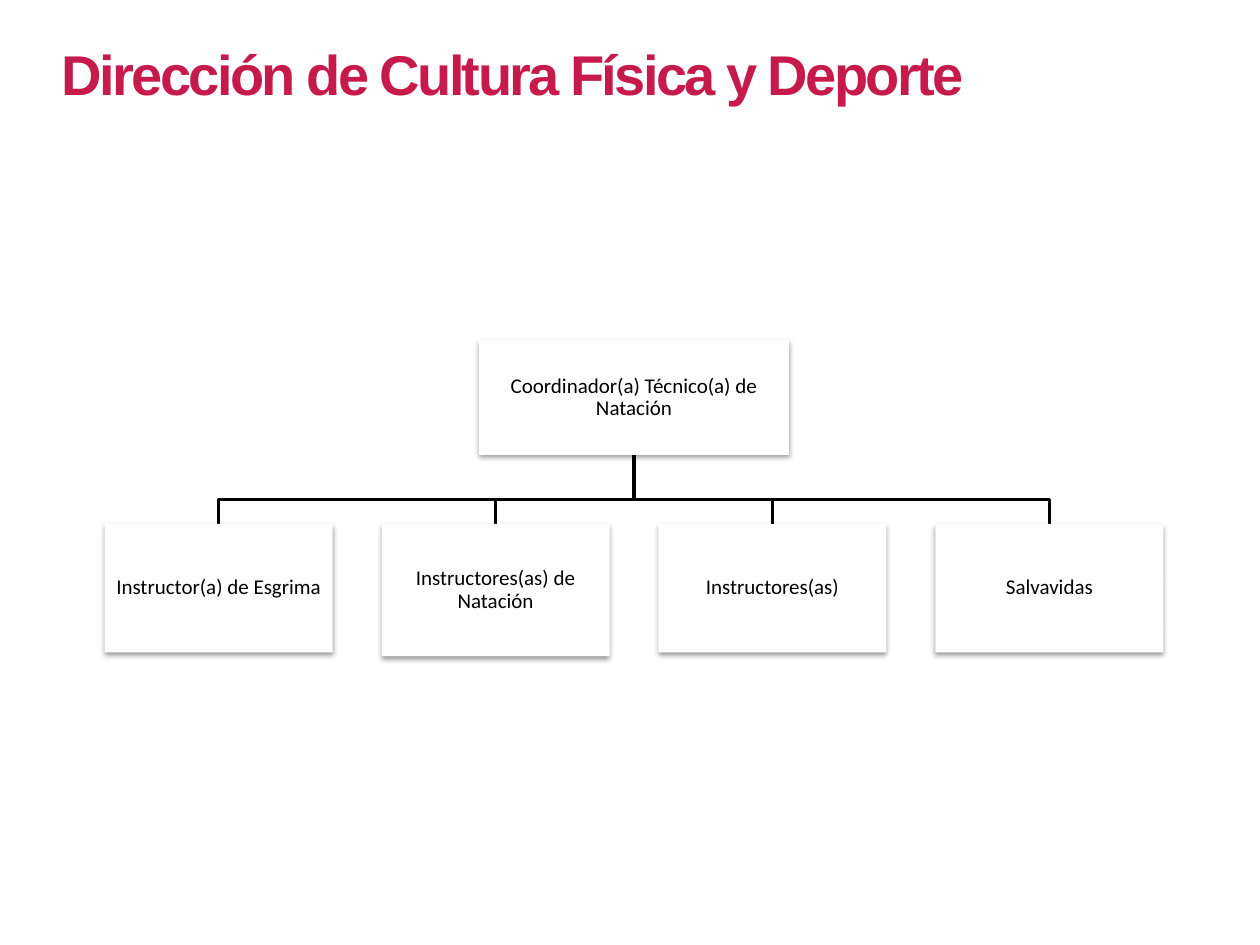
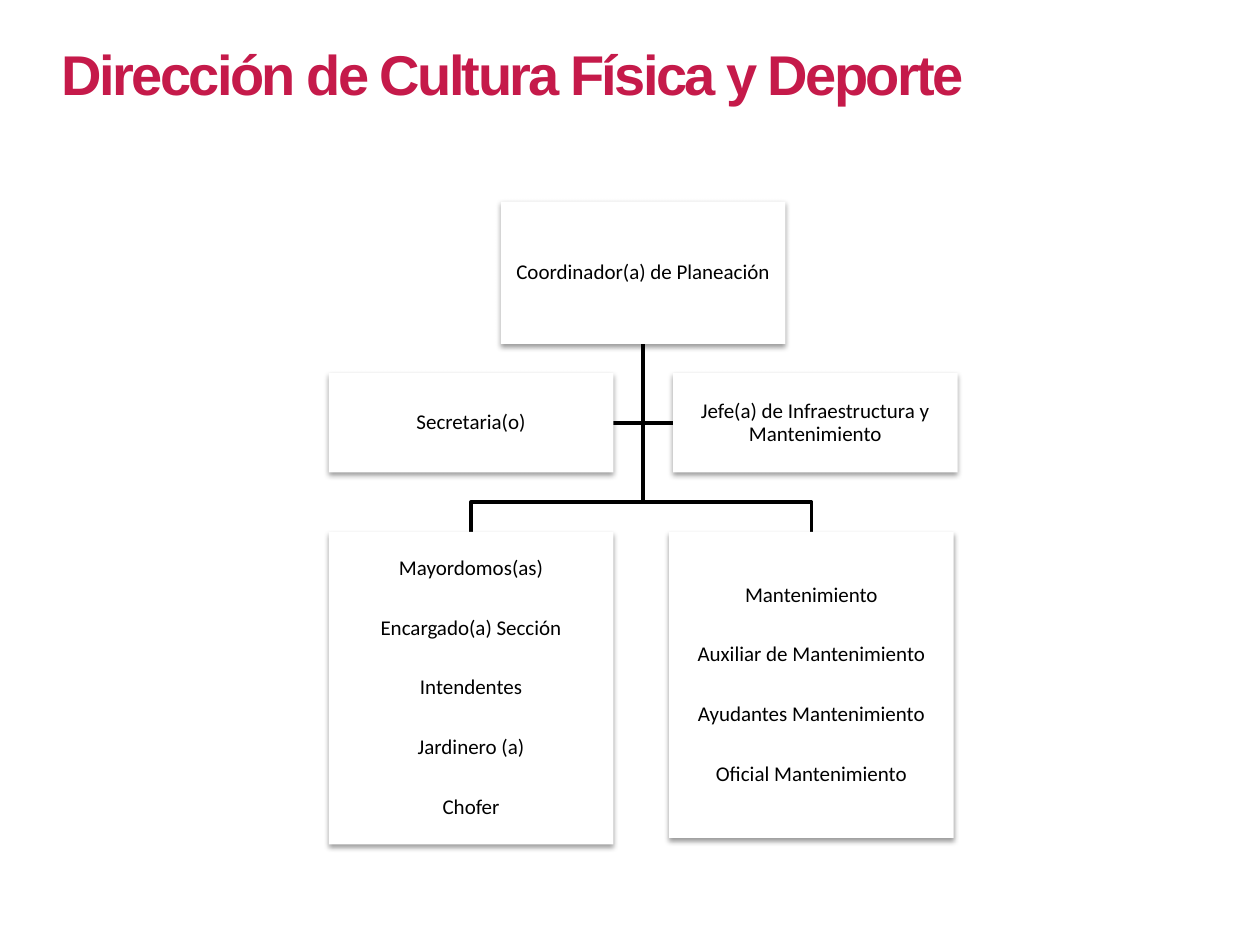
import dataclasses
import lxml.etree
import pptx
import pptx.dml.color
import pptx.enum.shapes
import pptx.enum.text
import pptx.oxml.ns
import pptx.util

Pt = pptx.util.Pt


@dataclasses.dataclass(frozen=True)
class Theme:
    """Colours, fonts and sizes shared by the slides."""
    red: str = "C51A4A"
    black: str = "000000"
    white: str = "FFFFFF"
    head_font: str = "Arial"
    card_font: str = "Calibri"
    head_size: float = 32
    card_size: float = 12
    line: float = 2
    inset: float = 0.9
    gap: float = 21.1


@dataclasses.dataclass(frozen=True)
class Box:
    """A rectangle in points."""
    left: float
    top: float
    width: float
    height: float

    @property
    def mid(self):
        """Return the horizontal middle."""
        return self.left + self.width / 2

    @property
    def base(self):
        """Return the bottom edge."""
        return self.top + self.height

    def inner(self, left, top, width, height):
        """Return a box placed relative to this one."""
        return Box(self.left + left, self.top + top, width, height)

    def place(self):
        """Return the four sides as lengths."""
        return [Pt(side) for side in (self.left, self.top, self.width, self.height)]


THEME = Theme()
HEAD = Box(28.1, 18.7, 553.7, 46)


def color(code):
    """Turn a hex code into a colour."""
    return pptx.dml.color.RGBColor.from_string(code)


def style(para, font, size, code, bold=False):
    """Set the font of a paragraph."""
    para.font.name = font
    para.font.size = Pt(size)
    para.font.bold = bold
    para.font.color.rgb = color(code)


def add_shade(shape):
    """Give a card its soft shadow below."""
    shape.shadow.inherit = False
    tag = pptx.oxml.ns.qn
    effects = shape._element.spPr.find(tag("a:effectLst"))
    shade = lxml.etree.SubElement(effects, tag("a:outerShdw"), blurRad=str(Pt(3.1)),
                                  dist=str(Pt(1.6)), dir="5400000", rotWithShape="0")
    tint = lxml.etree.SubElement(shade, tag("a:srgbClr"), val=THEME.black)
    lxml.etree.SubElement(tint, tag("a:alpha"), val="38000")


def add_card(slide, box, *lines):
    """Draw a white card with one paragraph per post."""
    card = slide.shapes.add_shape(pptx.enum.shapes.MSO_SHAPE.RECTANGLE, *box.place())
    card.fill.solid()
    card.fill.fore_color.rgb = color(THEME.white)
    card.line.fill.background()
    add_shade(card)
    frame = card.text_frame
    frame.word_wrap = True
    frame.vertical_anchor = pptx.enum.text.MSO_ANCHOR.MIDDLE
    frame.margin_left = frame.margin_right = Pt(THEME.inset)
    frame.margin_top = frame.margin_bottom = Pt(THEME.inset)
    for i, line in enumerate(lines):
        para = frame.add_paragraph() if i else frame.paragraphs[0]
        para.text = line
        para.alignment = pptx.enum.text.PP_ALIGN.CENTER
        para.line_spacing = 0.9
        if i:
            para.space_before = Pt(THEME.gap)
        style(para, THEME.card_font, THEME.card_size, THEME.black)


def add_route(slide, *points):
    """Draw an open line through the points."""
    start, *rest = [(Pt(x), Pt(y)) for x, y in points]
    maker = slide.shapes.build_freeform(*start)
    maker.add_line_segments(rest, close=False)
    route = maker.convert_to_shape()
    route.fill.background()
    route.line.color.rgb = color(THEME.black)
    route.line.width = Pt(THEME.line)
    route.shadow.inherit = False


def add_branch(slide, root, child, drop):
    """Link a card to one below, turning a drop above it."""
    turn = child.top - drop
    add_route(slide, (root.mid, root.base), (root.mid, turn),
              (child.mid, turn), (child.mid, child.top))


def add_slide(deck, text):
    """Add a slide with its title."""
    slide = deck.slides.add_slide(deck.slide_layouts[5])
    title = slide.shapes.title
    title.left, title.top, title.width, title.height = HEAD.place()
    frame = title.text_frame
    frame.text = text
    frame.word_wrap = True
    frame.auto_size = pptx.enum.text.MSO_AUTO_SIZE.SHAPE_TO_FIT_TEXT
    frame.vertical_anchor = pptx.enum.text.MSO_ANCHOR.TOP
    para = frame.paragraphs[0]
    para.alignment = pptx.enum.text.PP_ALIGN.LEFT
    style(para, THEME.head_font, THEME.head_size, THEME.red, True)
    para.runs[0]._r.get_or_add_rPr().set("spc", "-150")
    return slide


def add_swim(slide, box):
    """Draw the swimming chart: one head over a row of cards."""
    width, head = 130.3, 177.1
    posts = [("Instructor(a) de Esgrima", 73.4), ("Instructores(as) de Natación", 75.6),
             ("Instructores(as)", 73.4), ("Salvavidas", 73.4)]
    step = (box.width - width) / (len(posts) - 1)
    root = box.inner((box.width - head) / 2, 0, head, 65.5)
    cards = [(box.inner(i * step, 105, width, height), post)
             for i, (post, height) in enumerate(posts)]
    for card, _ in reversed(cards):
        add_branch(slide, root, card, 13.9)
    add_card(slide, root, "Coordinador(a) Técnico(a) de Natación")
    for card, post in cards:
        add_card(slide, card, post)


def add_plan(slide, box):
    """Draw the planning chart: head, two aides and two teams."""
    width = 162.6
    right = box.width - width
    root = box.inner(right / 2, 0, width, 81.4)
    aides = [box.inner(x, 98.1, width, 56.7) for x in (0, right)]
    teams = [box.inner(0, 188.7, width, 178.6), box.inner(right - 2.2, 188.7, width, 175)]
    level = aides[0].top + aides[0].height / 2
    for side in (aides[1].left, aides[0].left + width):
        add_route(slide, (root.mid, root.base), (root.mid, level), (side, level))
    for team in reversed(teams):
        add_branch(slide, root, team, 17)
    add_card(slide, root, "Coordinador(a) de Planeación")
    add_card(slide, teams[0], "Mayordomos(as)", "Encargado(a) Sección",
             "Intendentes", "Jardinero (a)", "Chofer")
    add_card(slide, teams[1], "Mantenimiento", "Auxiliar de Mantenimiento",
             "Ayudantes Mantenimiento", "Oficial Mantenimiento")
    add_card(slide, aides[0], "Secretaria(o)")
    add_card(slide, aides[1], "Jefe(a) de Infraestructura y Mantenimiento")


def main():
    """Build and save the deck."""
    deck = pptx.Presentation()
    deck.slide_width, deck.slide_height = Pt(720), Pt(540)
    charts = [(add_swim, Box(59.8, 194.4, 605, 180.6)),
              (add_plan, Box(187.9, 115.2, 359.3, 367.3))]
    for draw, box in charts:
        draw(add_slide(deck, "Dirección de Cultura Física y Deporte"), box)
    deck.save("out.pptx")


if __name__ == "__main__":
    main()
